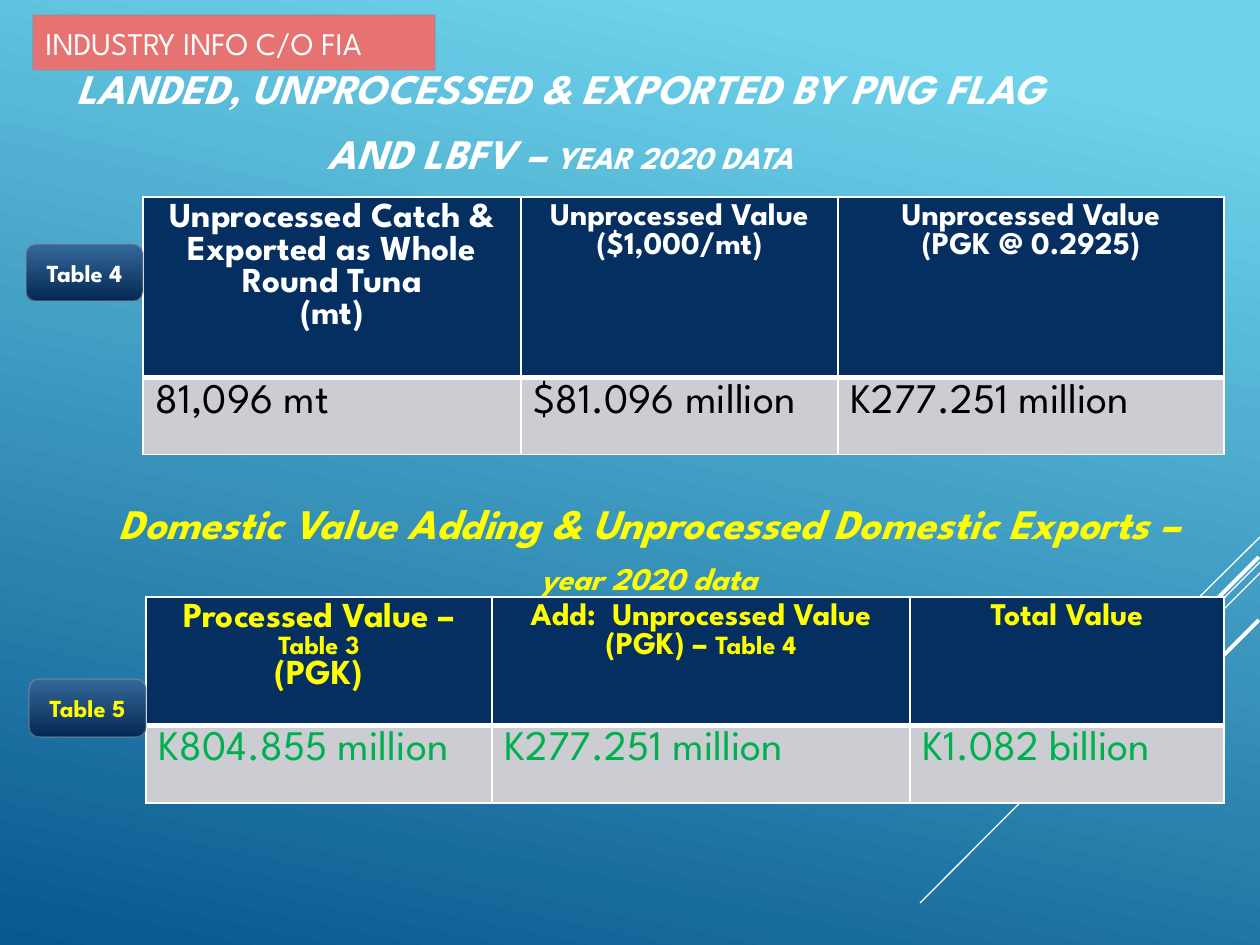
from dataclasses import dataclass

import pptx
import pptx.dml.color
import pptx.enum.dml
import pptx.enum.shapes
import pptx.enum.text
import pptx.oxml
import pptx.oxml.ns
import pptx.oxml.xmlchemy
import pptx.util

EMU_PER_PX = 914400 / 126
FONT = "League Spartan"
COLORS = {
    "white": "FFFFFF", "black": "000000", "yellow": "FFFF00", "green": "00B050",
    "navy": "052F61", "grey": "CCCDD2", "coral": "E67272", "outline": "89919C",
    "sky": "6ED2EB", "sea": "06588E", "button_top": "35699B", "button_end": "042853",
}
ALIGN = pptx.enum.text.PP_ALIGN
ANCHOR = pptx.enum.text.MSO_ANCHOR
SHAPE = pptx.enum.shapes.MSO_SHAPE

Run = tuple[str, int]  # text and size in points
Paragraphs = list[list[Run]]


@dataclass
class Box:
    left: int
    top: int
    width: int
    height: int


@dataclass
class Ray:
    start: tuple[int, int]
    end: tuple[int, int]
    weight: float


@dataclass
class DataTable:
    left: int
    top: int
    columns: list[int]
    rows: list[int]
    headers: list[Paragraphs]
    values: list[str]
    header_color: str
    value_color: str
    label: str
    label_box: Box


def px(length: int) -> int:
    return round(length * EMU_PER_PX)


def place(box: Box) -> list[int]:
    return [px(n) for n in (box.left, box.top, box.width, box.height)]


def rgb(name: str):
    return pptx.dml.color.RGBColor.from_string(COLORS[name])


def solid(fill, color: str) -> None:
    fill.solid()
    fill.fore_color.rgb = rgb(color)


def gradient(fill, angle: int, *stops: tuple[float, str]) -> None:
    """Two-stop gradient; the angle runs clockwise."""
    fill.gradient()
    fill.gradient_angle = 360 - angle
    for stop, (position, color) in zip(fill.gradient_stops, stops):
        stop.position = position
        stop.color.rgb = rgb(color)


def write(frame, paragraphs: Paragraphs, *, color: str, bold=False, italic=False,
          align=ALIGN.LEFT, spacing=1.0) -> None:
    for index, runs in enumerate(paragraphs):
        paragraph = frame.add_paragraph() if index else frame.paragraphs[0]
        paragraph.alignment = align
        paragraph.line_spacing = spacing
        for text, size in runs:
            run = paragraph.add_run()
            run.text = text
            run.font.name = FONT
            run.font.size = pptx.util.Pt(size)
            run.font.bold = bold
            run.font.italic = italic
            run.font.color.rgb = rgb(color)


def add_ray(slide, ray: Ray) -> None:
    line = slide.shapes.add_connector(
        pptx.enum.shapes.MSO_CONNECTOR.STRAIGHT, *map(px, ray.start + ray.end))
    line.line.color.rgb = rgb("white")
    line.line.width = pptx.util.Pt(ray.weight)
    line._element.spPr.append(pptx.oxml.xmlchemy.OxmlElement("a:effectLst"))


def add_panel(slide, kind, box: Box):
    """Shape with the thin, partly transparent outline."""
    panel = slide.shapes.add_shape(kind, *place(box))
    panel.shadow.inherit = False
    panel.line.color.rgb = rgb("outline")
    panel.line.width = pptx.util.Pt(0.75)
    outline = panel.line._ln.find(".//" + pptx.oxml.ns.qn("a:srgbClr"))
    alpha = pptx.oxml.xmlchemy.OxmlElement("a:alpha")
    alpha.set("val", "60000")
    outline.append(alpha)
    panel.text_frame.word_wrap = True
    panel.text_frame.vertical_anchor = ANCHOR.MIDDLE
    return panel


def set_borders(cell, **weights: float) -> None:
    properties = cell._tc.get_or_add_tcPr()
    for side, weight in weights.items():
        properties.append(pptx.oxml.parse_xml(
            f'<a:ln{side} {pptx.oxml.ns.nsdecls("a")} w="{int(pptx.util.Pt(weight))}">'
            f'<a:solidFill><a:srgbClr val="{COLORS["white"]}"/></a:solidFill>'
            f'</a:ln{side}>'))


def add_data_table(slide, data: DataTable) -> None:
    box = Box(data.left, data.top, sum(data.columns), sum(data.rows))
    table = slide.shapes.add_table(2, len(data.columns), *place(box)).table
    for column, width in zip(table.columns, data.columns):
        column.width = px(width)
    for row, height in zip(table.rows, data.rows):
        row.height = px(height)
    for index, (header, value) in enumerate(zip(data.headers, data.values)):
        head, body = table.cell(0, index), table.cell(1, index)
        set_borders(head, L=1, R=1, T=1, B=3)
        set_borders(body, L=1, R=1, T=3, B=1)
        solid(head.fill, "navy")
        solid(body.fill, "grey")
        write(head.text_frame, header, color=data.header_color, bold=True,
              align=ALIGN.CENTER)
        write(body.text_frame, [[(value, 24)]], color=data.value_color)

    button = add_panel(slide, SHAPE.ROUNDED_RECTANGLE, data.label_box)
    gradient(button.fill, 90, (0, "button_top"), (1, "button_end"))
    write(button.text_frame, [[(data.label, 14)]], color=data.header_color,
          bold=True, align=ALIGN.CENTER)


RAYS = [
    Ray((1260, 537), (1155, 641), 0.75),
    Ray((1260, 562), (920, 903), 0.75),
    Ray((1260, 573), (1043, 790), 0.75),
    Ray((1259, 557), (1061, 755), 2.25),
    Ray((1259, 620), (1115, 764), 2.25),
]

TABLES = [
    DataTable(
        143, 197, [378, 317, 386], [142, 77],
        [[[("Unprocessed Catch & Exported as Whole Round Tuna", 20)], [("(mt)", 20)]],
         [[("Unprocessed Value", 18)], [("($1,000/mt)", 18)]],
         [[("Unprocessed Value", 18)], [("(PGK @ 0.2925)", 18)]]],
        ["81,096 mt", "$81.096 million", "K277.251 million"],
        "white", "black", "Table 4", Box(26, 244, 117, 57)),
    DataTable(
        146, 597, [346, 418, 314], [127, 78],
        [[[("Processed Value – ", 20), ("Table 3", 15)], [("(PGK)", 20)]],
         [[("Add:  Unprocessed Value", 18)], [("(PGK) – ", 18), ("Table 4", 15)]],
         [[("Total Value", 18)]]],
        ["K804.855 million", "K277.251 million", "K1.082 billion"],
        "yellow", "green", "Table 5", Box(29, 679, 117, 58)),
]


def main() -> None:
    deck = pptx.Presentation()
    deck.slide_width, deck.slide_height = px(1260), px(945)
    slide = deck.slides.add_slide(deck.slide_layouts[5])
    gradient(slide.background.fill, 102, (0.1, "sky"), (1, "sea"))

    # Decorative rays behind the tables
    for ray in RAYS:
        add_ray(slide, ray)

    # Headings
    heading = dict(bold=True, italic=True, align=ALIGN.CENTER, spacing=1.3)
    title = slide.shapes.title
    title.left, title.top, title.width, title.height = place(Box(44, 49, 1033, 127))
    title.text_frame.auto_size = pptx.enum.text.MSO_AUTO_SIZE.NONE
    title.text_frame.vertical_anchor = ANCHOR.MIDDLE
    write(title.text_frame,
          [[("LANDED, UNPROCESSED & EXPORTED BY PNG FLAG AND LBFV – ", 24),
            ("YEAR 2020 DATA", 18)]], color="white", **heading)

    subtitle = slide.shapes.add_textbox(*place(Box(91, 476, 1116, 115)))
    subtitle.text_frame.word_wrap = True
    write(subtitle.text_frame,
          [[("Domestic Value Adding & Unprocessed Domestic Exports – ", 24),
            ("year 2020 data", 18)]], color="yellow", **heading)

    # Tables with their labels
    for data in TABLES:
        add_data_table(slide, data)

    # Source tag
    tag = add_panel(slide, SHAPE.RECTANGLE, Box(33, 15, 402, 55))
    solid(tag.fill, "coral")
    write(tag.text_frame, [[("INDUSTRY INFO C/O FIA", 18)]], color="white")

    deck.save("out.pptx")


if __name__ == "__main__":
    main()
